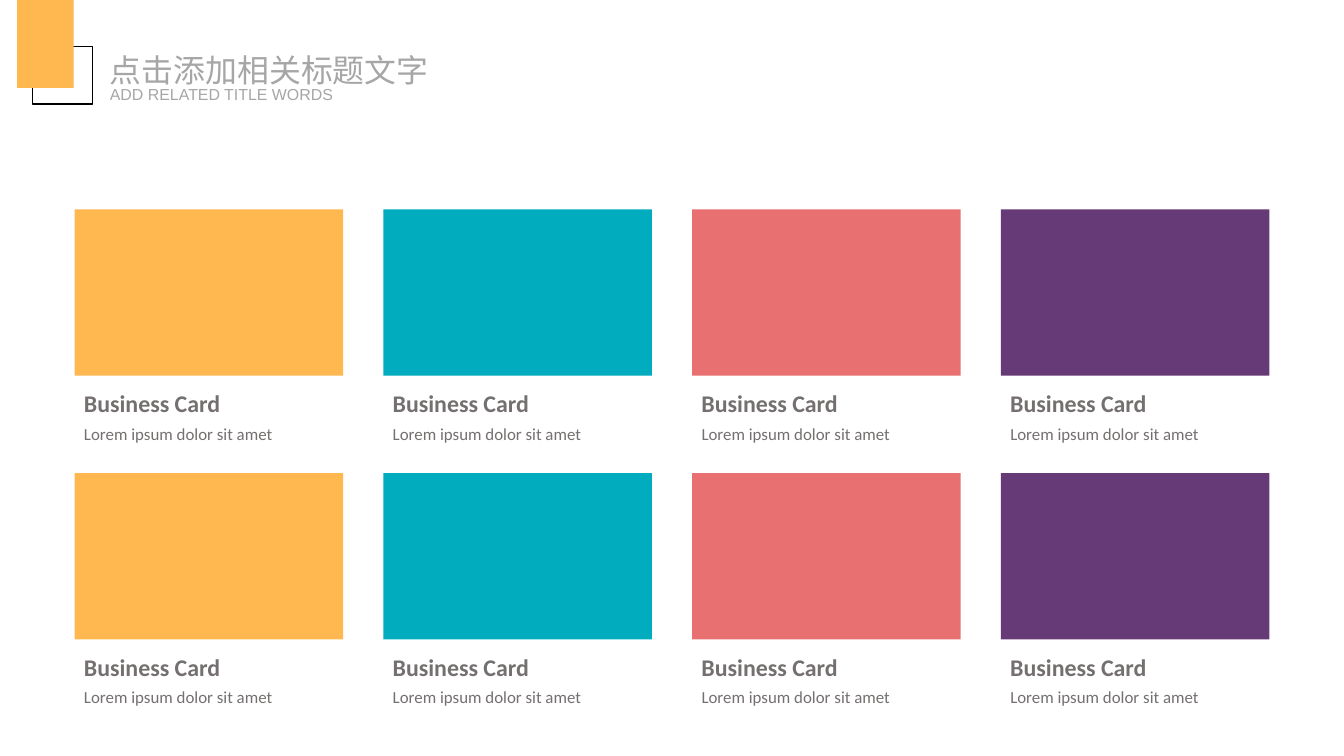
from itertools import product
from lxml.etree import SubElement
from pptx import Presentation
from pptx.dml.color import RGBColor as RGB
from pptx.enum.shapes import MSO_SHAPE as Shape
from pptx.enum.text import MSO_ANCHOR as Anchor, MSO_AUTO_SIZE as Auto, PP_ALIGN as Align
from pptx.oxml.ns import qn
from pptx.util import Inches, Pt


def color(hue):
    return RGB.from_string(hue)


class Deck:
    """Hold the style and the current slide, and draw each kind of element."""

    fills = ["FFB850", "01ACBE", "E87071", "663A77"]
    ink = "757070"
    pale = "A6A6A6"
    line = "000000"

    def __init__(self, wide, high):
        self.show = Presentation()
        self.show.slide_width = Inches(wide)
        self.show.slide_height = Inches(high)
        self.slide = self.show.slides.add_slide(self.show.slide_layouts[5])

    def rect(self, x, y, w, h, fill=None, line=None):
        box = self.slide.shapes.add_shape(
            Shape.RECTANGLE, Inches(x), Inches(y), Inches(w), Inches(h))
        box.shadow.inherit = False
        if fill:
            box.fill.solid()
            box.fill.fore_color.rgb = color(fill)
        else:
            box.fill.background()
        if line:
            box.line.color.rgb = color(line)
            box.line.width = Pt(1)
        else:
            box.line.fill.background()

    def style(self, box, text, size, font, hue, bold=False, flush=False):
        frame = box.text_frame
        frame.text = text
        frame.word_wrap = False
        frame.auto_size = Auto.SHAPE_TO_FIT_TEXT
        frame.vertical_anchor = Anchor.TOP
        if flush:
            frame.margin_left = frame.margin_right = 0
            frame.margin_top = frame.margin_bottom = 0
        para = frame.paragraphs[0]
        para.alignment = Align.LEFT
        run = para.runs[0]
        run.font.size = Pt(size)
        run.font.bold = bold
        run.font.color.rgb = color(hue)
        run.font.name = font
        SubElement(run._r.get_or_add_rPr(), qn("a:ea")).set("typeface", font)

    def title(self, x, y, w, h, text, size, font):
        box = self.slide.shapes.title
        box.left, box.top = Inches(x), Inches(y)
        box.width, box.height = Inches(w), Inches(h)
        self.style(box, text, size, font, self.pale, flush=True)

    def text(self, x, y, w, h, text, size, font, hue, bold=False, flush=False, group=None):
        home = group or self.slide
        box = home.shapes.add_textbox(Inches(x), Inches(y), Inches(w), Inches(h))
        self.style(box, text, size, font, hue, bold, flush)

    def card(self, x, y, fill):
        self.rect(x, y, 2.81, 1.74, fill)
        group = self.slide.shapes.add_group_shape()
        self.text(x, y + 1.83, 1.64, 0.4, "Business Card", 18, "Calibri",
                  self.ink, bold=True, group=group)
        self.text(x, y + 2.19, 2.18, 0.31, "Lorem ipsum dolor sit amet", 12.7,
                  "Calibri", self.ink, group=group)


def main():
    deck = Deck(14.06, 7.91)
    for row, (col, fill) in product(range(2), enumerate(deck.fills)):
        deck.card(0.78 + 3.23 * col, 2.19 + 2.76 * row, fill)
    deck.rect(0.34, 0.49, 0.63, 0.6, line=deck.line)
    deck.rect(0.18, 0, 0.59, 0.92, deck.fills[0])
    deck.title(1.15, 0.53, 3.37, 0.4, "点击添加相关标题文字", 24, "Noto Sans CJK SC")
    deck.text(1.15, 0.89, 2.36, 0.2, "ADD RELATED TITLE WORDS", 12, "Arial",
              deck.pale, flush=True)
    deck.show.save("out.pptx")


if __name__ == "__main__":
    main()
